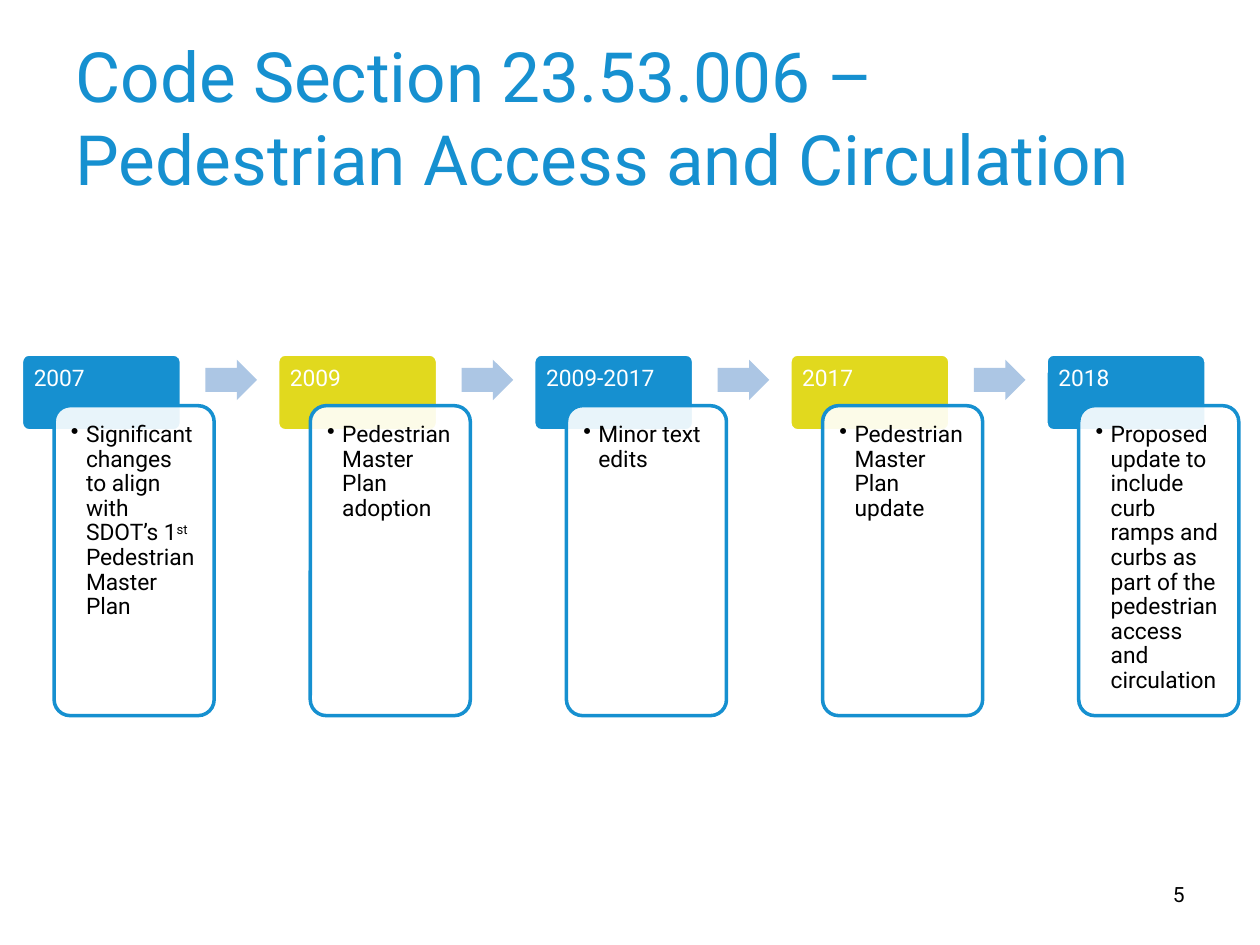
"""Build a slide with a five-step timeline of code section changes."""
from lxml import etree
from pptx import Presentation
from pptx.dml.color import RGBColor
from pptx.enum.shapes import MSO_SHAPE
from pptx.enum.text import MSO_ANCHOR, MSO_AUTO_SIZE, PP_ALIGN
from pptx.oxml.ns import qn
from pptx.util import Inches, Pt

ROUND, ARROW = MSO_SHAPE.ROUNDED_RECTANGLE, MSO_SHAPE.RIGHT_ARROW
MIDDLE, NO_FIT = MSO_ANCHOR.MIDDLE, MSO_AUTO_SIZE.NONE
LEFT, RIGHT = PP_ALIGN.LEFT, PP_ALIGN.RIGHT
BLUE = RGBColor(0x16, 0x90, 0xD0)
LIME = RGBColor(0xE1, 0xD9, 0x1E)
PALE = RGBColor(0xAC, 0xC6, 0xE4)
WHITE = RGBColor(0xFF, 0xFF, 0xFF)
BLACK = RGBColor(0, 0, 0)
FACE = "Roboto"

TITLE = "Code Section 23.53.006 – Pedestrian Access and Circulation"
PAGE = "5"
STEPS = [
    ("2007", ["Significant changes to align with SDOT’s 1", "st",
              " Pedestrian Master Plan"]),
    ("2009", ["Pedestrian Master Plan adoption"]),
    ("2009-2017", ["Minor text edits"]),
    ("2017", ["Pedestrian Master Plan update"]),
    ("2018", ["Proposed update to include curb ramps and curbs as part of "
              "the pedestrian access and circulation"]),
]

WIDE, HIGH = 10, 7.5
START, PITCH, TOP = 0.17, 2.033, 2.81
TAB_W, TAB_H, YEAR_H = 1.27, 0.61, 0.41
CARD_X, CARD_H, PAD = 0.26, 2.46, 0.035
ARROW_X, ARROW_W, ARROW_H = 1.46, 0.41, 0.32


def inches(*sizes):
    return [Inches(size) for size in sizes]


def style(para, size, color, align=LEFT):
    para.alignment = align
    para.font.name = FACE
    para.font.size = Pt(size)
    para.font.color.rgb = color


def add_form(slide, kind, box, fill, line=None, adjust=(0.1,)):
    form = slide.shapes.add_shape(kind, *inches(*box))
    form.shadow.inherit = False
    for place, value in enumerate(adjust):
        form.adjustments[place] = value
    form.fill.solid()
    form.fill.fore_color.rgb = fill
    if line is None:
        form.line.fill.background()
    else:
        form.line.color.rgb = line
        form.line.width = Pt(2)
    return form


def add_text(slide, box, parts, size, color, insets, align=LEFT):
    frame = slide.shapes.add_textbox(*inches(*box)).text_frame
    frame.word_wrap = True
    (frame.margin_left, frame.margin_top,
     frame.margin_right, frame.margin_bottom) = inches(*insets)
    para = frame.paragraphs[0]
    style(para, size, color, align)
    for part in parts:
        run = para.add_run()
        run.text = part
        if part == "st":
            run._r.get_or_add_rPr().set("baseline", "30000")
    return para


def add_bullet(para):
    para.level = 1
    props = para._p.get_or_add_pPr()
    props.set("marL", str(Inches(0.12)))
    props.set("indent", str(-Inches(0.12)))
    mark = etree.Element(qn("a:buChar"), char="•")
    props.find(qn("a:defRPr")).addprevious(mark)


def add_step(slide, index, year, parts):
    left = START + index * PITCH
    card_x, card_y = left + CARD_X, TOP + YEAR_H
    add_form(slide, ROUND, (left, TOP, TAB_W, TAB_H),
             LIME if index % 2 else BLUE, WHITE)
    para = add_text(slide, (left, TOP, TAB_W, YEAR_H), [year], 13, WHITE,
                    (0.1, 0.1, 0.1, 0.05))
    para.line_spacing = 0.9

    card = add_form(slide, ROUND, (card_x, card_y, TAB_W, CARD_H), WHITE, BLUE)
    tint = card.fill._xPr.find(qn("a:solidFill"))[0]
    etree.SubElement(tint, qn("a:alpha"), val="90000")
    box = (card_x + PAD, card_y + PAD, TAB_W - 2 * PAD, CARD_H - 2 * PAD)
    para = add_text(slide, box, parts, 13, BLACK, [0.1] * 4)
    para.line_spacing = 0.9
    add_bullet(para)

    if index < len(STEPS) - 1:
        middle = TOP + (YEAR_H - ARROW_H) / 2
        add_form(slide, ARROW, (left + ARROW_X, middle, ARROW_W, ARROW_H),
                 PALE, adjust=(0.6, 0.5))


def main():
    deck = Presentation()
    deck.slide_width, deck.slide_height = inches(WIDE, HIGH)
    slide = deck.slides.add_slide(deck.slide_layouts[5])
    title = slide.shapes.title
    title.left, title.top, title.width, title.height = inches(0.5, 0.3, 9, 1.25)
    frame = title.text_frame
    frame.text = TITLE
    frame.auto_size = NO_FIT
    frame.vertical_anchor = MIDDLE
    style(frame.paragraphs[0], 39.6, BLUE)
    add_text(slide, (7.17, 6.95, 2.33, 0.4), [PAGE], 12, BLACK,
             (0.1, 0.05, 0.1, 0.05), RIGHT)
    for index, (year, parts) in enumerate(STEPS):
        add_step(slide, index, year, parts)
    deck.save("out.pptx")


if __name__ == "__main__":
    main()
